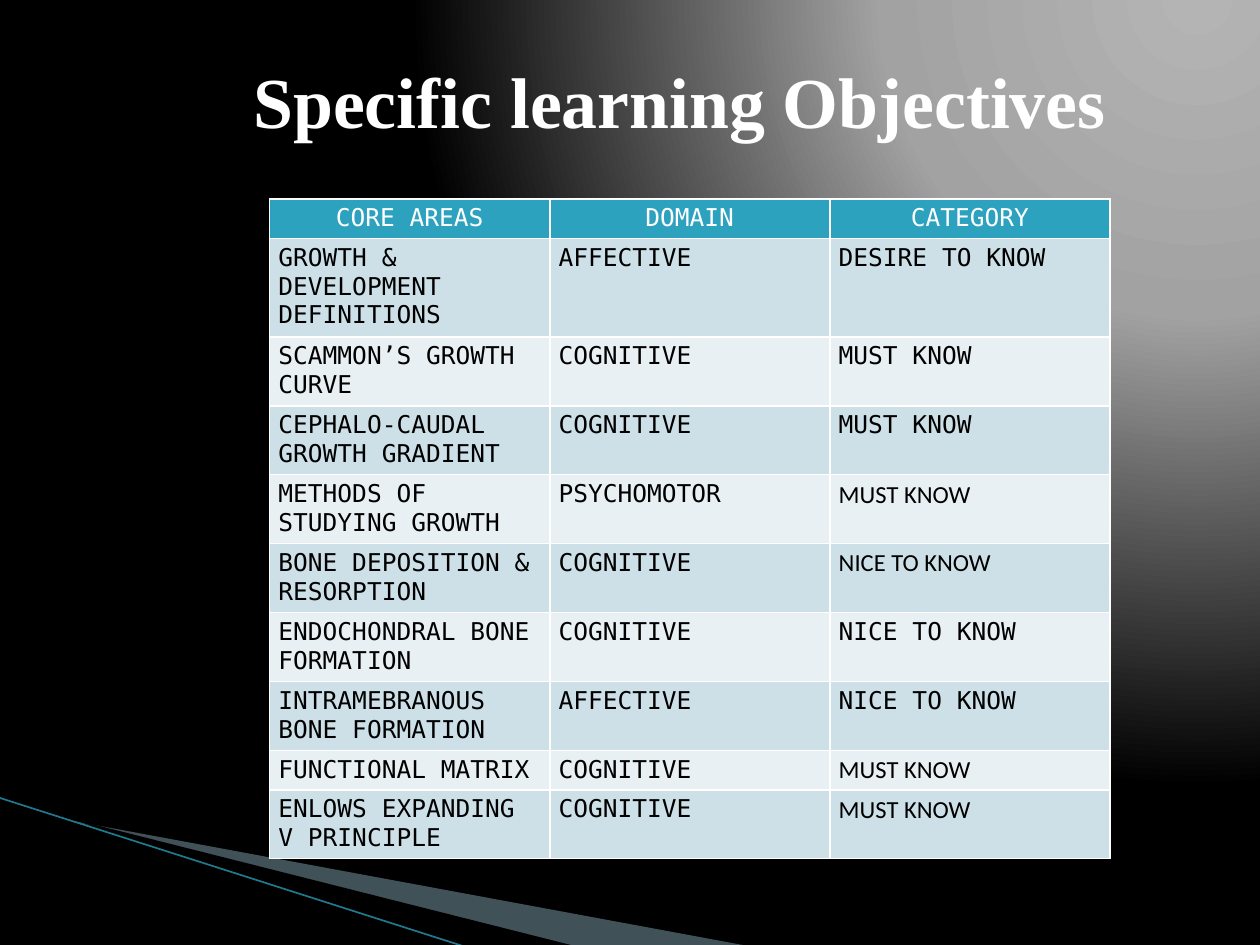
import pptx
import pptx.dml.color
import pptx.enum.shapes
import pptx.enum.text
import pptx.oxml
import pptx.oxml.ns
import pptx.util
from pptx.util import Inches

HUES = {
    "white": "FFFFFF", "black": "000000", "head": "2DA2BF", "odd": "CDE0E8",
    "even": "E8F0F4", "wedge": "A0CBDC", "line": "1F7A8F",
}
GLOW = [(0, "B4B4B4"), (40, "A2A2A2"), (100, "000000")]
MONO, SANS = "DejaVu Sans Mono", "Calibri"
HEADS = ["CORE AREAS", "DOMAIN", "CATEGORY"]
ROWS = [
    (3, MONO, "GROWTH & DEVELOPMENT DEFINITIONS", "AFFECTIVE", "DESIRE TO KNOW"),
    (2, MONO, "SCAMMON’S GROWTH CURVE", "COGNITIVE", "MUST KNOW"),
    (2, MONO, "CEPHALO-CAUDAL GROWTH GRADIENT", "COGNITIVE", "MUST KNOW"),
    (2, SANS, "METHODS OF STUDYING GROWTH", "PSYCHOMOTOR", "MUST KNOW"),
    (2, SANS, "BONE DEPOSITION & RESORPTION", "COGNITIVE", "NICE TO KNOW"),
    (2, MONO, "ENDOCHONDRAL BONE FORMATION", "COGNITIVE", "NICE TO KNOW"),
    (2, MONO, "INTRAMEBRANOUS BONE FORMATION", "AFFECTIVE", "NICE TO KNOW"),
    (1, SANS, "FUNCTIONAL MATRIX", "COGNITIVE", "MUST KNOW"),
    (2, SANS, "ENLOWS EXPANDING V PRINCIPLE", "COGNITIVE", "MUST KNOW"),
]


def rgb(name):
    """Return the named colour."""
    return pptx.dml.color.RGBColor.from_string(HUES[name])


def xml(tag, body="", attrs=""):
    """Return a drawing element with the given attributes and content."""
    space = pptx.oxml.ns.nsdecls("a")
    return pptx.oxml.parse_xml(f"<a:{tag} {space} {attrs}>{body}</a:{tag}>")


def find(root, tag):
    """Return all drawing elements of one tag below the root."""
    return root.findall(".//" + pptx.oxml.ns.qn("a:" + tag))


def set_font(para, face, size, hue, bold=False):
    """Set the font of a paragraph."""
    font = para.font
    font.name, font.size, font.bold = face, pptx.util.Pt(size), bold
    font.color.rgb = rgb(hue)


def add_glow(slide):
    """Fill the background with a round gradient from the upper right."""
    slide.background.fill.gradient()
    grad = find(slide.element, "gradFill")[0]
    for part in list(grad):
        grad.remove(part)
    stops = "".join(
        f'<a:gs pos="{pos * 1000}"><a:srgbClr val="{hue}"/></a:gs>' for pos, hue in GLOW
    )
    grad.append(xml("gsLst", stops))
    rect = '<a:fillToRect l="95000" t="-106000" r="5000" b="206000"/>'
    grad.append(xml("path", rect, 'path="circle"'))


def add_wedge(slide, box, points, hue, alpha=100):
    """Draw a wedge whose points are relative to its frame and may pass it."""
    left, top, width, height = map(Inches, box)
    first, *rest = [(left + Inches(x), top + Inches(y)) for x, y in points]
    pen = slide.shapes.build_freeform(*first)
    pen.add_line_segments(rest)
    shape = pen.convert_to_shape()
    geom = shape.element.spPr
    for dot in find(geom, "pt"):
        dot.set("x", str(int(dot.get("x")) + shape.left - left))
        dot.set("y", str(int(dot.get("y")) + shape.top - top))
    for track in find(geom, "path"):
        track.set("w", str(width))
        track.set("h", str(height))
    shape.left, shape.top, shape.width, shape.height = left, top, width, height
    shape.shadow.inherit = False
    shape.line.fill.background()
    shape.fill.solid()
    shape.fill.fore_color.rgb = rgb(hue)
    if alpha < 100:
        find(geom, "srgbClr")[0].append(xml("alpha", attrs=f'val="{alpha * 1000}"'))


def add_swoosh(slide, left, top, width, height):
    """Draw the wedges and thin line in the lower left corner."""
    pale = (left + 0.79, top - 0.86, 4.16, 1.58)
    add_wedge(slide, pale, [(-0.23, 1.04), (5.17, 2.04), (3.78, 2.04)], "wedge", 40)
    dark = (left - 0.05, top, 4.16, 0.92)
    add_wedge(slide, dark, [(0.59, 0.16), (4.63, 1.18), (3.78, 1.19)], "black")
    line = slide.shapes.add_connector(
        pptx.enum.shapes.MSO_CONNECTOR.STRAIGHT, Inches(left), Inches(top),
        Inches(left + width), Inches(top + height),
    )
    line.line.color.rgb = rgb("line")
    line.line.width = pptx.util.Pt(0.95)
    line.element.spPr.append(xml("effectLst"))


def add_title(slide, left, top, width, height):
    """Place the slide title."""
    box = slide.shapes.add_textbox(Inches(left), Inches(top), Inches(width), Inches(height))
    frame = box.text_frame
    frame.word_wrap = True
    frame.vertical_anchor = pptx.enum.text.MSO_ANCHOR.MIDDLE
    para = frame.paragraphs[0]
    para.text = "Specific learning Objectives "
    para.alignment = pptx.enum.text.PP_ALIGN.CENTER
    set_font(para, "Times New Roman", 41, "white", True)


def fill_cell(cell, text, face, ink, fill):
    """Write and style one table cell."""
    cell.margin_left = cell.margin_right = Inches(0.07)
    cell.margin_top = cell.margin_bottom = Inches(0.04)
    para = cell.text_frame.paragraphs[0]
    para.text = text
    set_font(para, face, 14, ink)
    cell.fill.solid()
    cell.fill.fore_color.rgb = rgb(fill)
    return para


def add_goals(slide, left, top, width, height):
    """Place the table of learning objectives."""
    table = slide.shapes.add_table(
        len(ROWS) + 1, len(HEADS), Inches(left), Inches(top), Inches(width), Inches(height)
    ).table
    table.rows[0].height = Inches(0.3)
    for col, text in enumerate(HEADS):
        para = fill_cell(table.cell(0, col), text, MONO, "white", "head")
        para.alignment = pptx.enum.text.PP_ALIGN.CENTER
    for row, (lines, face, *texts) in enumerate(ROWS, 1):
        table.rows[row].height = Inches(0.08 + 0.22 * lines)
        fill = "odd" if row % 2 else "even"
        for col, text in enumerate(texts):
            fill_cell(table.cell(row, col), text, face if col == 2 else MONO, "black", fill)


def main():
    """Build and save the slide."""
    deck = pptx.Presentation()
    deck.slide_width, deck.slide_height = Inches(10), Inches(7.5)
    slide = deck.slides.add_slide(deck.slide_layouts[6])
    add_glow(slide)
    add_swoosh(slide, -0.01, 6.33, 3.72, 1.19)
    add_title(slide, 1.67, 0.34, 7.6, 0.9)
    add_goals(slide, 2.14, 1.58, 6.67, 5.18)
    deck.save("out.pptx")


if __name__ == "__main__":
    main()
